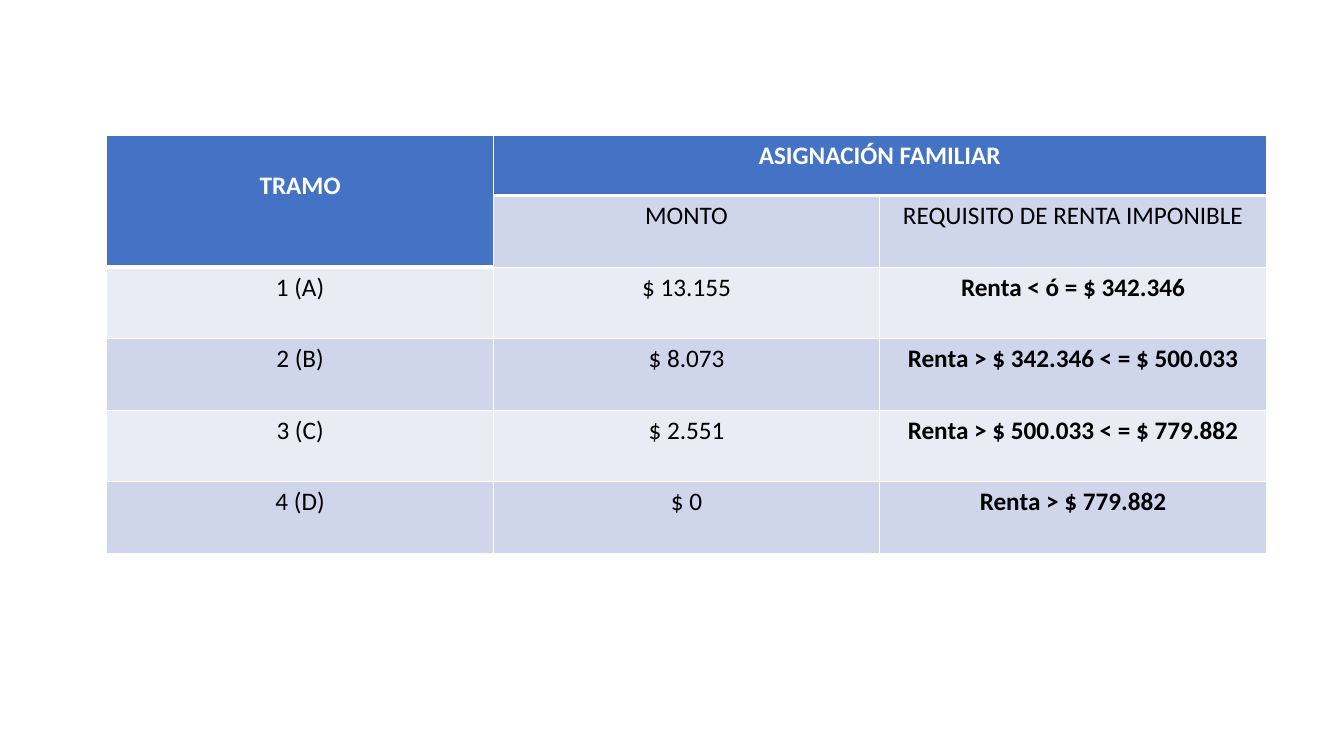
from lxml.etree import SubElement
from pptx import Presentation
from pptx.dml.color import RGBColor
from pptx.enum.text import PP_ALIGN
from pptx.oxml.ns import qn
from pptx.util import Inches, Pt


def color(value):
    return RGBColor.from_string(value)


def add_border(cell, side, points):
    line = SubElement(cell._tc.get_or_add_tcPr(), qn(f"a:ln{side}"), w=str(Pt(points)))
    fill = SubElement(line, qn("a:solidFill"))
    SubElement(fill, qn("a:srgbClr"), val="FFFFFF")


deck = Presentation()
deck.slide_width = Inches(13.33)
deck.slide_height = Inches(7.5)
page = deck.slides.add_slide(deck.slide_layouts[6])

rows = [
    ("TRAMO", "ASIGNACIÓN FAMILIAR", ""),
    ("", "MONTO", "REQUISITO DE RENTA IMPONIBLE"),
    ("1 (A)", "$ 13.155", "Renta < ó = $ 342.346"),
    ("2 (B)", "$ 8.073", "Renta > $ 342.346 < = $ 500.033"),
    ("3 (C)", "$ 2.551", "Renta > $ 500.033 < = $ 779.882"),
    ("4 (D)", "$ 0", "Renta > $ 779.882"),
]
header_cells = {(0, 0), (0, 1), (0, 2), (1, 0)}
header_bottoms = {(1, 0), (0, 0), (0, 1), (0, 2)}
header_tops_below = {(2, 0), (1, 1), (1, 2)}

table = page.shapes.add_table(
    len(rows), 3, Inches(1.06), Inches(1.34), Inches(11.5), Inches(4.15)
).table
for column in table.columns:
    column.width = Inches(11.5 / 3)
for index, row in enumerate(table.rows):
    row.height = Inches(0.6 if index == 0 else 0.71)

table.cell(0, 0).merge(table.cell(1, 0))
table.cell(0, 1).merge(table.cell(0, 2))

for row_index, texts in enumerate(rows):
    for column_index, text in enumerate(texts):
        place = (row_index, column_index)
        is_header = place in header_cells
        cell = table.cell(*place)
        add_border(cell, "L", 1)
        add_border(cell, "R", 1)
        add_border(cell, "T", 3 if place in header_tops_below else 1)
        add_border(cell, "B", 3 if place in header_bottoms else 1)
        band = "CFD5EA" if row_index % 2 else "E9EBF5"
        cell.fill.solid()
        cell.fill.fore_color.rgb = color("4472C4" if is_header else band)
        if not text:
            continue
        cell.text_frame.text = text
        para = cell.text_frame.paragraphs[0]
        para.alignment = PP_ALIGN.CENTER
        font = para.runs[0].font
        font.name = "Calibri"
        font.size = Pt(18)
        font.bold = is_header or (row_index > 1 and column_index == 2)
        font.color.rgb = color("FFFFFF" if is_header else "000000")

table.cell(0, 0).margin_top = Inches(0.35)

deck.save("out.pptx")
